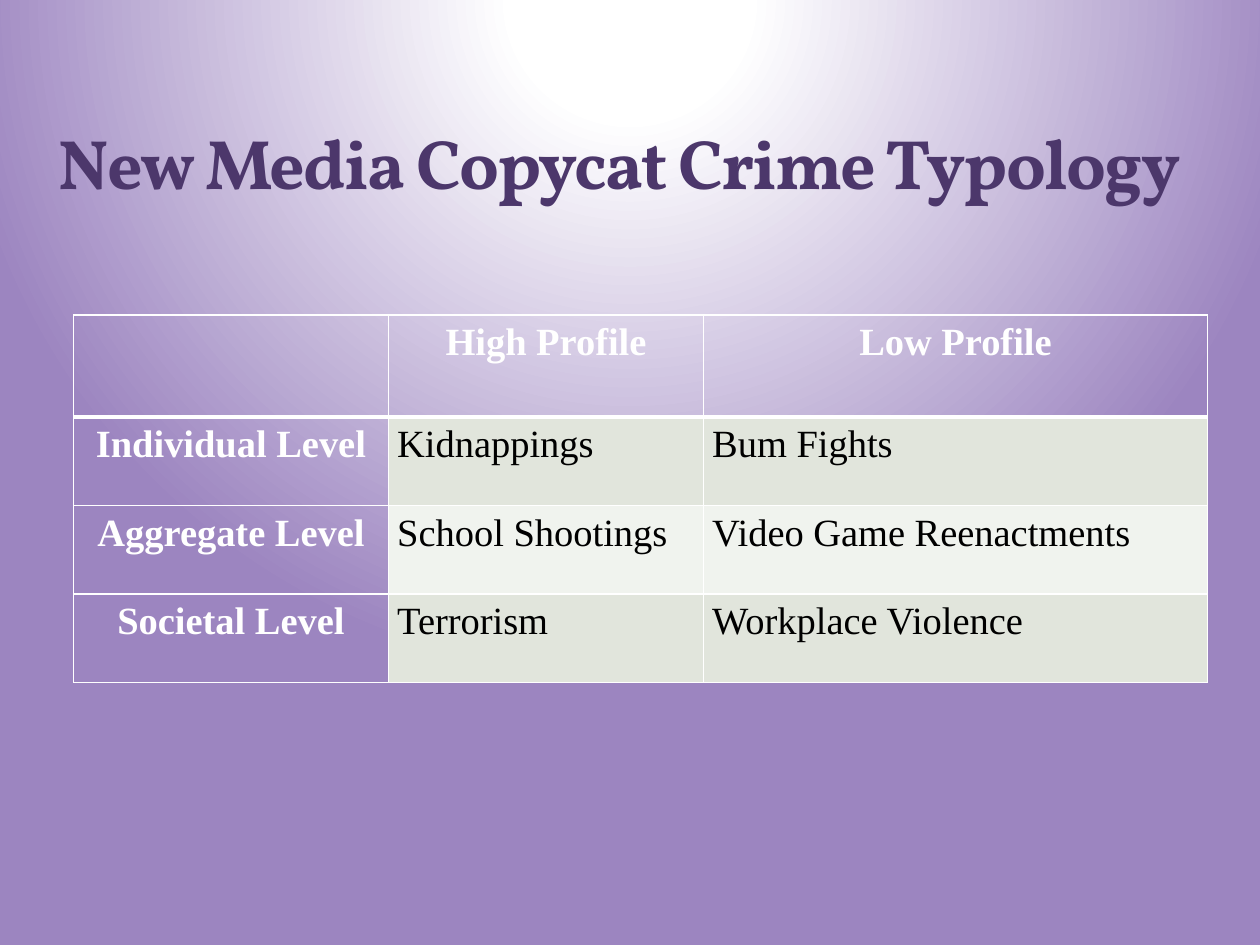
from lxml import etree
from pptx import Presentation
from pptx.dml.color import RGBColor
from pptx.enum import text
from pptx.oxml import parse_xml
from pptx.oxml.ns import nsdecls, qn
from pptx.util import Pt

WHITE = RGBColor(0xFF, 0xFF, 0xFF)
BLACK = RGBColor(0, 0, 0)
LAVENDER = RGBColor(0x9C, 0x85, 0xC0)
PLUM = RGBColor(0x4C, 0x37, 0x6B)
OLIVE = RGBColor(0x3C, 0x44, 0x22)
BANDS = [RGBColor(0xE1, 0xE5, 0xDC), RGBColor(0xF0, 0xF3, 0xEE)]

TYPOLOGY = [
    ["", "High Profile", "Low Profile"],
    ["Individual Level", "Kidnappings", "Bum Fights"],
    ["Aggregate Level", "School Shootings", "Video Game Reenactments"],
    ["Societal Level", "Terrorism", "Workplace Violence"],
]
COLUMN_WIDTHS = [180, 180, 288]
ROW_HEIGHTS = [58.3, 50.6, 50.6, 50.6]


def set_font(font, name, size, color, bold):
    font.name = name
    font.size = Pt(size)
    font.bold = bold
    font.color.rgb = color


def add_glow_background(slide):
    """Radial gradient, white above the slide and lavender around it."""
    slide.background.fill.gradient()
    gradient = slide._element.find(".//" + qn("a:gradFill"))
    stops = "".join(
        f'<a:gs pos="{percent * 1000}"><a:srgbClr val="{color}"/></a:gs>'
        for percent, color in [(0, WHITE), (15, WHITE), (87, LAVENDER)])
    gradient.getparent().replace(gradient, parse_xml(
        f'<a:gradFill {nsdecls("a")} rotWithShape="1"><a:gsLst>{stops}</a:gsLst>'
        '<a:path path="circle"><a:fillToRect l="50000" t="-80000" r="50000" b="180000"/>'
        '</a:path></a:gradFill>'))


def add_title(slide, wording):
    frame = slide.shapes.add_textbox(Pt(24), Pt(0), Pt(660), Pt(120)).text_frame
    frame.word_wrap = True
    frame.vertical_anchor = text.MSO_ANCHOR.BOTTOM
    title = frame.paragraphs[0]
    title.text = wording
    title.alignment = text.PP_ALIGN.CENTER
    set_font(title.font, "Vollkorn", 40, PLUM, True)
    properties = title.font._rPr
    properties.set("spc", "-100")
    properties.insert(0, parse_xml(
        f'<a:ln {nsdecls("a")} w="{Pt(0.25)}"><a:solidFill><a:srgbClr val="{OLIVE}">'
        '<a:alpha val="25000"/></a:srgbClr></a:solidFill></a:ln>'))


def set_borders(cell, bottom_width):
    properties = cell._tc.get_or_add_tcPr()
    widths = {"lnL": 1, "lnR": 1, "lnT": 1, "lnB": bottom_width}
    for index, (side, width) in enumerate(widths.items()):
        border = etree.Element(qn(f"a:{side}"), w=str(Pt(width)))
        fill = etree.SubElement(border, qn("a:solidFill"))
        etree.SubElement(fill, qn("a:srgbClr"), val=str(WHITE))
        properties.insert(index, border)


def fill_cell(cell, wording, row, column):
    is_heading = row == 0 or column == 0
    cell.margin_left = cell.margin_right = Pt(5)
    cell.margin_top = cell.margin_bottom = Pt(0)
    if is_heading:
        cell.fill.background()
    else:
        cell.fill.solid()
        cell.fill.fore_color.rgb = BANDS[(row - 1) % 2]
    set_borders(cell, 3 if row == 0 else 1)
    label = cell.text_frame.paragraphs[0]
    label.text = wording
    label.line_spacing = 1.15
    label.alignment = text.PP_ALIGN.CENTER if is_heading else text.PP_ALIGN.LEFT
    set_font(label.font, "Times New Roman", 22, WHITE if is_heading else BLACK, is_heading)


def add_typology_table(slide):
    table = slide.shapes.add_table(
        len(ROW_HEIGHTS), len(COLUMN_WIDTHS), Pt(42), Pt(180),
        Pt(sum(COLUMN_WIDTHS)), Pt(sum(ROW_HEIGHTS))).table
    for column, width in zip(table.columns, COLUMN_WIDTHS):
        column.width = Pt(width)
    for row, height in zip(table.rows, ROW_HEIGHTS):
        row.height = Pt(height)
    for r, wordings in enumerate(TYPOLOGY):
        for c, wording in enumerate(wordings):
            fill_cell(table.cell(r, c), wording, r, c)


def main():
    deck = Presentation()
    deck.slide_width, deck.slide_height = Pt(720), Pt(540)
    slide = deck.slides.add_slide(deck.slide_layouts[6])
    add_glow_background(slide)
    add_typology_table(slide)
    add_title(slide, "New Media Copycat Crime Typology")
    deck.save("out.pptx")


if __name__ == "__main__":
    main()
